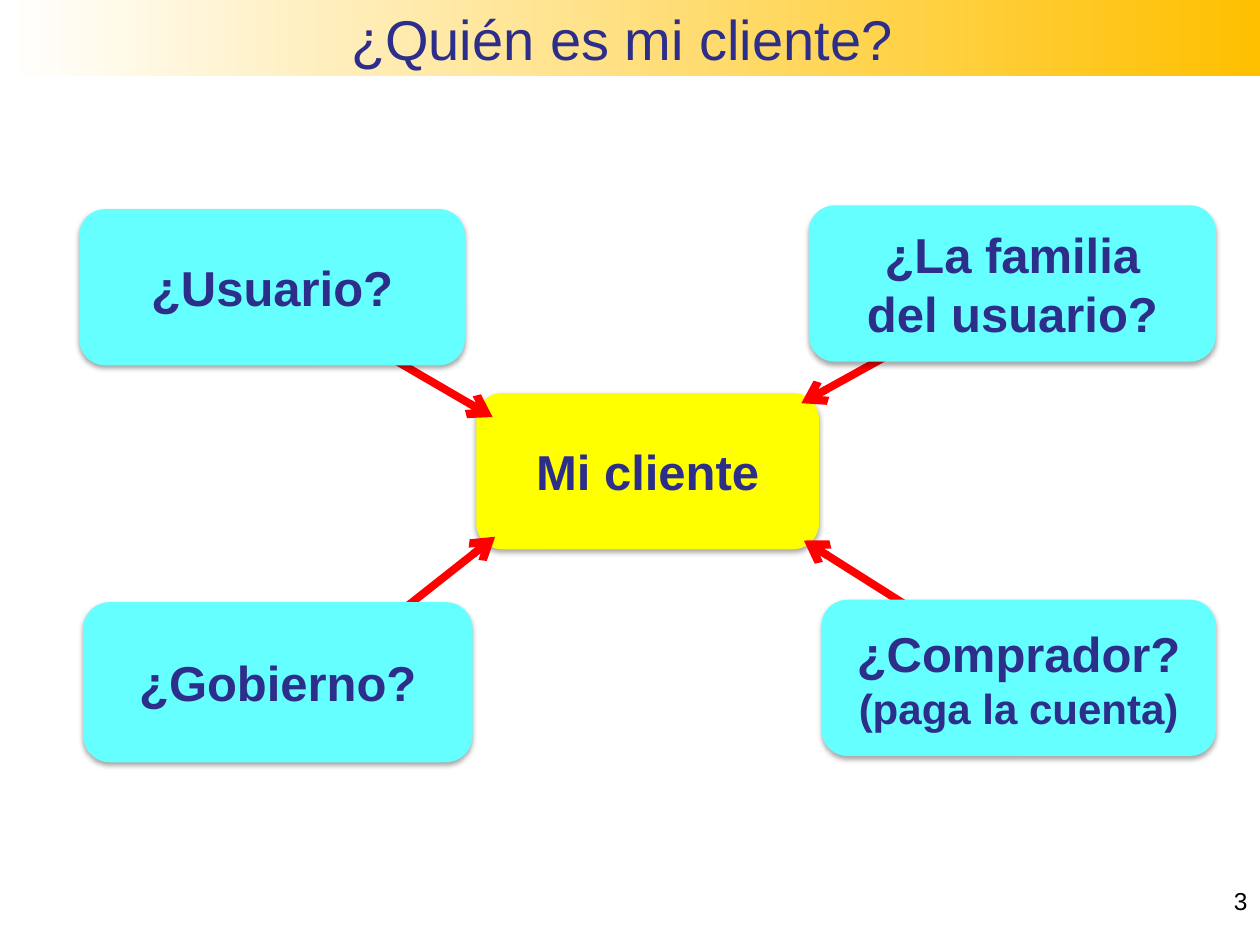
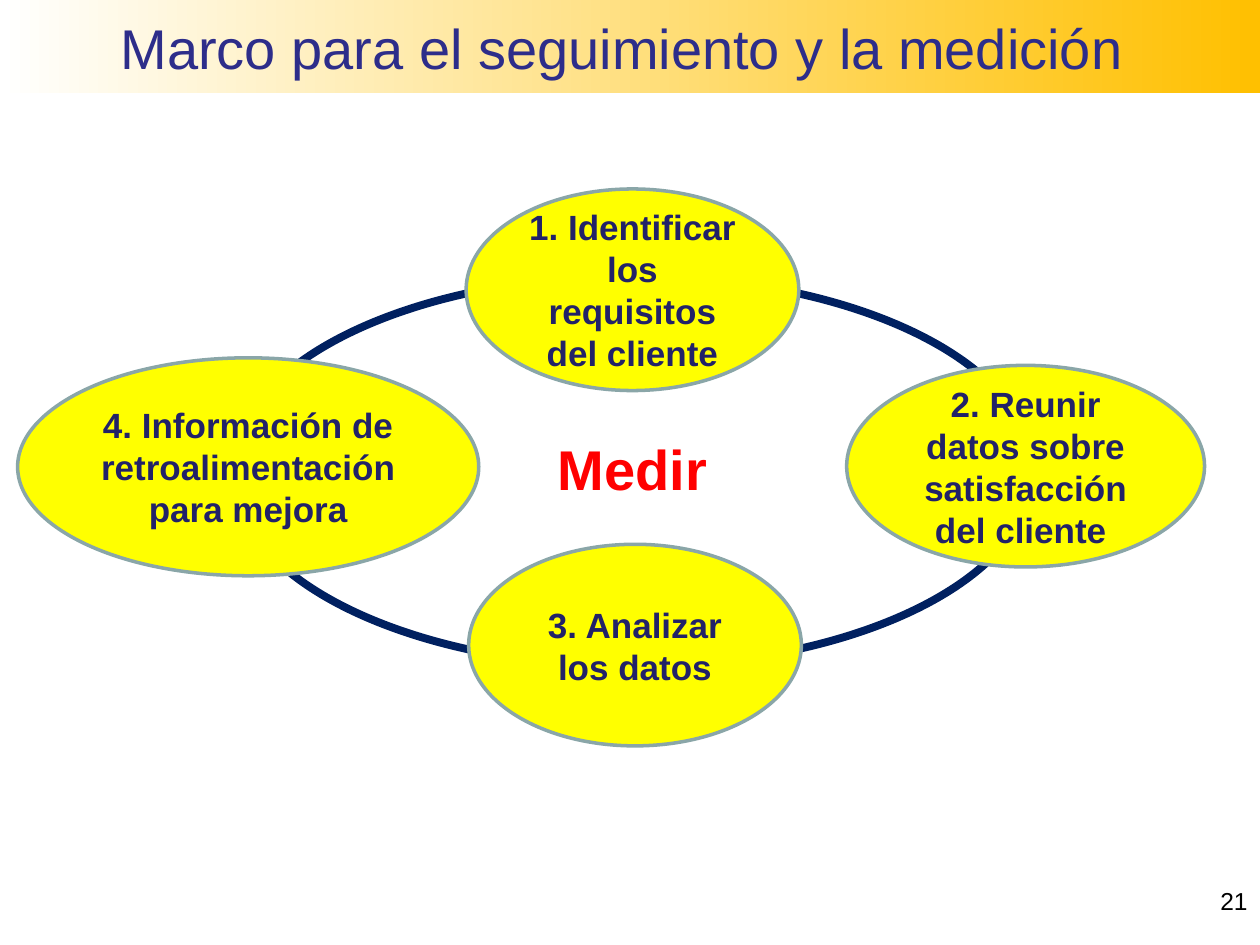
import pptx
import pptx.util
import pptx.dml.color
import pptx.enum.shapes
import pptx.enum.text
import pptx.oxml
import pptx.oxml.ns

RGBColor = pptx.dml.color.RGBColor
Pt = pptx.util.Pt
KIND = pptx.enum.shapes.MSO_SHAPE
ALIGN = pptx.enum.text.PP_ALIGN
MIDDLE = pptx.enum.text.MSO_ANCHOR.MIDDLE

WHITE = RGBColor(0xFF, 0xFF, 0xFF)
BLACK = RGBColor(0x00, 0x00, 0x00)
GOLD = RGBColor(0xFF, 0xC0, 0x00)
INDIGO = RGBColor(0x2D, 0x2D, 0x8A)
DARK = RGBColor(0x22, 0x22, 0x68)
NAVY = RGBColor(0x00, 0x20, 0x60)
YELLOW = RGBColor(0xFF, 0xFF, 0x00)
CYAN = RGBColor(0x66, 0xFF, 0xFF)
RED = RGBColor(0xFF, 0x00, 0x00)
GREY = RGBColor(0x8A, 0xA6, 0xA8)
FONT = "Arial"
SHADE = (
    '<a:outerShdw %s blurRad="39370" dist="22860" dir="5400000" rotWithShape="0">'
    '<a:srgbClr val="000000"><a:alpha val="35000"/></a:srgbClr></a:outerShdw>'
    % pptx.oxml.ns.nsdecls("a"))
HEAD = '<a:tailEnd %s type="arrow"/>' % pptx.oxml.ns.nsdecls("a")

deck = pptx.Presentation()
deck.slide_width = pptx.util.Inches(10)
deck.slide_height = pptx.util.Inches(7.5)

# Grid of 100 columns by 75 rows
COL = deck.slide_width / 100
ROW = deck.slide_height / 75


def grid(*cells):
    """Turn column and row numbers, taken in turn, into lengths."""
    return [round(n * (ROW if i % 2 else COL)) for i, n in enumerate(cells)]


def write(shape, text, size, color, bold=True, align=ALIGN.CENTER):
    """Put text in a shape and format its runs."""
    shape.text_frame.text = text
    for para in shape.text_frame.paragraphs:
        para.alignment = align
        for run in para.runs:
            run.font.name = FONT
            run.font.size = Pt(size)
            run.font.bold = bold
            run.font.color.rgb = color


# Shared title band and page number
pages = []
for title, high, number in [
        ("¿Quién es mi cliente? ", 6, "3"),
        ("Marco para el seguimiento y la medición ", 7.4, "21")]:
    page = deck.slides.add_slide(deck.slide_layouts[5])
    band = page.shapes.title
    band.left, band.top, band.width, band.height = grid(0, 0, 100, high)
    band.fill.gradient()
    band.fill.gradient_angle = 0
    for stop, color in zip(band.fill.gradient_stops, (WHITE, GOLD)):
        stop.color.rgb = color
    write(band, title, 32, INDIGO, bold=False)
    band.text_frame.vertical_anchor = MIDDLE
    band.text_frame.auto_size = pptx.enum.text.MSO_AUTO_SIZE.NONE
    foot = page.shapes.add_textbox(*grid(76.7, 69.8, 23.3, 5.2))
    foot.text_frame.word_wrap = True
    write(foot, number, 14, BLACK, bold=False, align=ALIGN.RIGHT)
    pages.append(page)
client, cycle = pages

# Slide 1: arrows lie over the centre box and under the outer boxes
boxes = [
    ("Mi cliente", YELLOW, (37.8, 31.2, 27.2, 12.4)),
    ("¿Usuario?", CYAN, (6.3, 16.6, 30.6, 12.4)),
    ("¿Gobierno?", CYAN, (6.6, 47.8, 30.9, 12.7)),
    ("¿Comprador?\n(paga la cuenta)", CYAN, (65.2, 47.6, 31.3, 12.4)),
    ("¿La familia\vdel usuario?", CYAN, (64.2, 16.3, 32.3, 12.4)),
]
arrows = [
    (30.5, 28.1, 39.1, 33.1),
    (31.7, 48.6, 39.3, 42.6),
    (70.3, 28.3, 63.6, 32),
    (72.5, 48.4, 63.8, 42.9),
]
for text, color, cells in boxes:
    box = client.shapes.add_shape(KIND.ROUNDED_RECTANGLE, *grid(*cells))
    box.fill.solid()
    box.fill.fore_color.rgb = color
    box.line.fill.background()
    box.shadow.inherit = False
    glow = box.element.spPr.find(pptx.oxml.ns.qn("a:effectLst"))
    glow.append(pptx.oxml.parse_xml(SHADE))
    write(box, text, 28, INDIGO)
    box.text_frame.vertical_anchor = MIDDLE
    for para in box.text_frame.paragraphs[1:]:
        para.runs[0].font.size = Pt(24)

    # Arrows into the centre box
    if color == YELLOW:
        for ends in arrows:
            arrow = client.shapes.add_connector(
                pptx.enum.shapes.MSO_CONNECTOR.STRAIGHT, *grid(*ends))
            arrow.line.color.rgb = RED
            arrow.line.width = Pt(4.5)
            props = arrow.element.spPr
            line = props.find(pptx.oxml.ns.qn("a:ln"))
            line.append(pptx.oxml.parse_xml(HEAD))
            props.append(pptx.oxml.parse_xml(
                "<a:effectLst %s/>" % pptx.oxml.ns.nsdecls("a")))

# Slide 2: ring behind the four steps
ring = cycle.shapes.add_shape(KIND.OVAL, *grid(18.4, 21.9, 63.6, 31))
ring.fill.background()
ring.line.color.rgb = NAVY
ring.line.width = Pt(4.5)
ring.shadow.inherit = False

# Steps of the cycle
for text, cells in [
        ("1. Identificar los requisitos del cliente", (37, 15, 26.4, 16)),
        ("3. Analizar los datos", (37.2, 43.2, 26.4, 16)),
        ("2. Reunir datos sobre satisfacción del cliente ",
         (67.2, 29, 28.4, 16)),
        ("4. Información de retroalimentación para mejora",
         (1.4, 28.4, 36.6, 17.3))]:
    step = cycle.shapes.add_shape(KIND.OVAL, *grid(*cells))
    step.fill.solid()
    step.fill.fore_color.rgb = YELLOW
    step.line.color.rgb = GREY
    step.line.width = Pt(2)
    step.shadow.inherit = False
    write(step, text, 20, DARK)
    step.text_frame.vertical_anchor = MIDDLE

# Word at the centre
core = cycle.shapes.add_textbox(*grid(43.3, 34, 14.1, 6.4))
core.text_frame.word_wrap = False
write(core, "Medir", 32, RED, align=ALIGN.LEFT)

deck.save("out.pptx")
